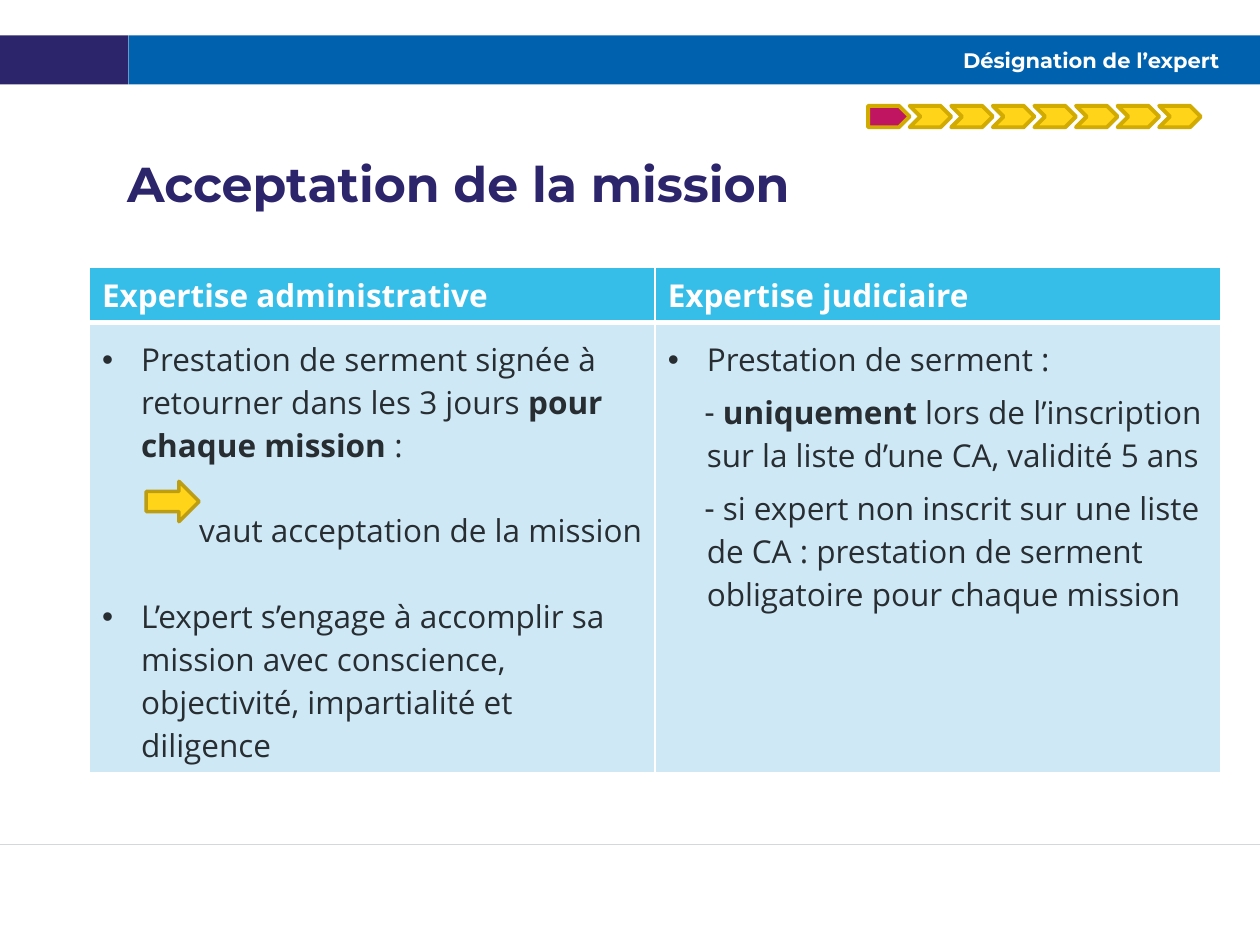
from lxml import etree
from pptx import Presentation
from pptx.dml.color import RGBColor
from pptx.enum.shapes import MSO_CONNECTOR, MSO_SHAPE
from pptx.enum.text import MSO_ANCHOR, MSO_AUTO_SIZE, PP_ALIGN
from pptx.oxml.ns import qn
from pptx.util import Inches, Pt

RECTANGLE = MSO_SHAPE.RECTANGLE
PENTAGON = MSO_SHAPE.PENTAGON
CHEVRON = MSO_SHAPE.CHEVRON
RIGHT_ARROW = MSO_SHAPE.RIGHT_ARROW
STRAIGHT = MSO_CONNECTOR.STRAIGHT
TOP, MIDDLE = MSO_ANCHOR.TOP, MSO_ANCHOR.MIDDLE
LEFT, RIGHT = PP_ALIGN.LEFT, PP_ALIGN.RIGHT
NO_FIT = MSO_AUTO_SIZE.NONE

COLORS = {
    "navy": "2C256B", "blue": "0062AE", "rule": "D2D9DA", "white": "FFFFFF",
    "header": "36BDE8", "cell": "CEE8F6", "text": "272D31",
    "yellow": "FFD419", "gold": "D2AB00", "bronze": "BD9D12", "magenta": "C01662",
}
HEADING_FONT, TABLE_FONT = "Montserrat", "Open Sans"

SECTION = "Désignation de l’expert"
HEADING = "Acceptation de la mission"
HEADERS = ["Expertise administrative", "Expertise judiciaire"]

POINT = {"margin": 0.31, "indent": -0.31, "bullet": "•", "before": 0}
SPACED_POINT = {**POINT, "before": 24.5}
CONSEQUENCE = {"margin": 0, "indent": 0.77, "bullet": None, "before": 24.5}
DASH = {"margin": 0.31, "indent": -0.02, "bullet": "-", "before": 6}

COLUMNS = [
    [
        (POINT, [("Prestation de serment signée à retourner dans les 3 jours ", False),
                 ("pour chaque mission", True), (" :", False)]),
        (CONSEQUENCE, [("vaut acceptation de la mission", False)]),
        (SPACED_POINT, [("L’expert s’engage à accomplir sa mission avec conscience, "
                         "objectivité, impartialité et diligence", False)]),
    ],
    [
        (POINT, [("Prestation de serment :", False)]),
        (DASH, [(" ", False), ("uniquement", True),
                (" lors de l’inscription sur la liste d’une CA, validité 5 ans", False)]),
        (DASH, [(" si expert non inscrit sur une liste de CA : prestation de serment "
                 "obligatoire pour chaque mission", False)]),
    ],
]
STEP_COUNT, STEP_LEFT, STEP_PITCH = 8, 6.89, 0.33


def rgb(name):
    return RGBColor.from_string(COLORS[name])


def add_block(shapes, kind, box, fill, line=None, width=0):
    block = shapes.add_shape(kind, *map(Inches, box))
    block.shadow.inherit = False
    block.fill.solid()
    block.fill.fore_color.rgb = rgb(fill)
    if line:
        block.line.color.rgb = rgb(line)
        block.line.width = Pt(width)
    else:
        block.line.fill.background()


def add_run(paragraph, text, size, font, color, bold):
    run = paragraph.add_run()
    run.text = text
    run.font.size = Pt(size)
    run.font.name = font
    run.font.bold = bold
    run.font.color.rgb = rgb(color)


def set_layout(paragraph, margin, indent, bullet, before):
    properties = paragraph._p.get_or_add_pPr()
    properties.set("marL", str(Inches(margin)))
    properties.set("indent", str(Inches(indent)))
    if bullet:
        etree.SubElement(properties, qn("a:buFont"), typeface="Arial")
        etree.SubElement(properties, qn("a:buChar"), char=bullet)
    else:
        etree.SubElement(properties, qn("a:buNone"))
    paragraph.space_before = Pt(before)


def fill_placeholder(placeholder, box, text, size, color, align, anchor):
    placeholder.left, placeholder.top, placeholder.width, placeholder.height = map(Inches, box)
    frame = placeholder.text_frame
    frame.margin_left = frame.margin_right = frame.margin_top = frame.margin_bottom = 0
    frame.vertical_anchor = anchor
    frame.auto_size = NO_FIT
    frame.word_wrap = True
    paragraph = frame.paragraphs[0]
    paragraph.alignment = align
    add_run(paragraph, text, size, HEADING_FONT, color, True)
    return paragraph


def style_cell(cell, fill, top, bottom):
    properties = cell._tc.get_or_add_tcPr()
    for side, width in (("lnL", 1), ("lnR", 1), ("lnT", top), ("lnB", bottom)):
        border = etree.SubElement(properties, qn("a:" + side), w=str(Pt(width)))
        solid = etree.SubElement(border, qn("a:solidFill"))
        etree.SubElement(solid, qn("a:srgbClr"), val=COLORS["white"])
    cell.fill.solid()
    cell.fill.fore_color.rgb = rgb(fill)


def add_comparison(shapes):
    table = shapes.add_table(2, 2, Inches(0.71), Inches(2.12), Inches(8.98), Inches(3.44)).table
    table.horz_banding = False
    table.rows[0].height, table.rows[1].height = Inches(0.38), Inches(3.06)
    for column, (header, points) in enumerate(zip(HEADERS, COLUMNS)):
        head, body = table.cell(0, column), table.cell(1, column)
        style_cell(head, "header", 1, 3)
        add_run(head.text_frame.paragraphs[0], header, 18, TABLE_FONT, "white", True)
        style_cell(body, "cell", 3, 1)
        body.margin_top = Inches(0.12)
        frame = body.text_frame
        for number, (layout, runs) in enumerate(points):
            paragraph = frame.add_paragraph() if number else frame.paragraphs[0]
            set_layout(paragraph, **layout)
            for text, bold in runs:
                add_run(paragraph, text, 18, TABLE_FONT, "text", bold)


def main():
    deck = Presentation()
    deck.slide_width, deck.slide_height = Inches(10), Inches(7.5)
    slide = deck.slides.add_slide(deck.slide_layouts[1])
    shapes = slide.shapes
    section, heading = shapes.title, slide.placeholders[1]

    add_block(shapes, RECTANGLE, (0, 0.28, 1.02, 0.39), "navy")
    add_block(shapes, RECTANGLE, (1.02, 0.28, 8.98, 0.39), "blue")
    rule = shapes.add_connector(STRAIGHT, 0, Inches(6.7), Inches(10), Inches(6.7))
    rule.line.color.rgb = rgb("rule")
    rule.line.width = Pt(0.75)
    etree.SubElement(rule._element.spPr, qn("a:effectLst"))

    shapes._spTree.append(section._element)
    fill_placeholder(section, (1.1, 0.28, 8.58, 0.39), SECTION, 12, "white", RIGHT, MIDDLE)
    add_comparison(shapes)
    shapes._spTree.append(heading._element)
    paragraph = fill_placeholder(heading, (0.71, 1.27, 8.98, 0.51), HEADING, 28, "navy", LEFT, TOP)
    set_layout(paragraph, 0.3, 0, None, 0)
    paragraph.line_spacing = 0.9

    add_block(shapes, RIGHT_ARROW, (1.16, 3.82, 0.42, 0.32), "yellow", "bronze", 2)
    progress = shapes.add_group_shape()
    for step in range(STEP_COUNT):
        kind, fill = (CHEVRON, "yellow") if step else (PENTAGON, "magenta")
        box = (STEP_LEFT + step * STEP_PITCH, 0.84, 0.33, 0.17)
        add_block(progress.shapes, kind, box, fill, "gold", 2.25)

    deck.save("out.pptx")


if __name__ == "__main__":
    main()
